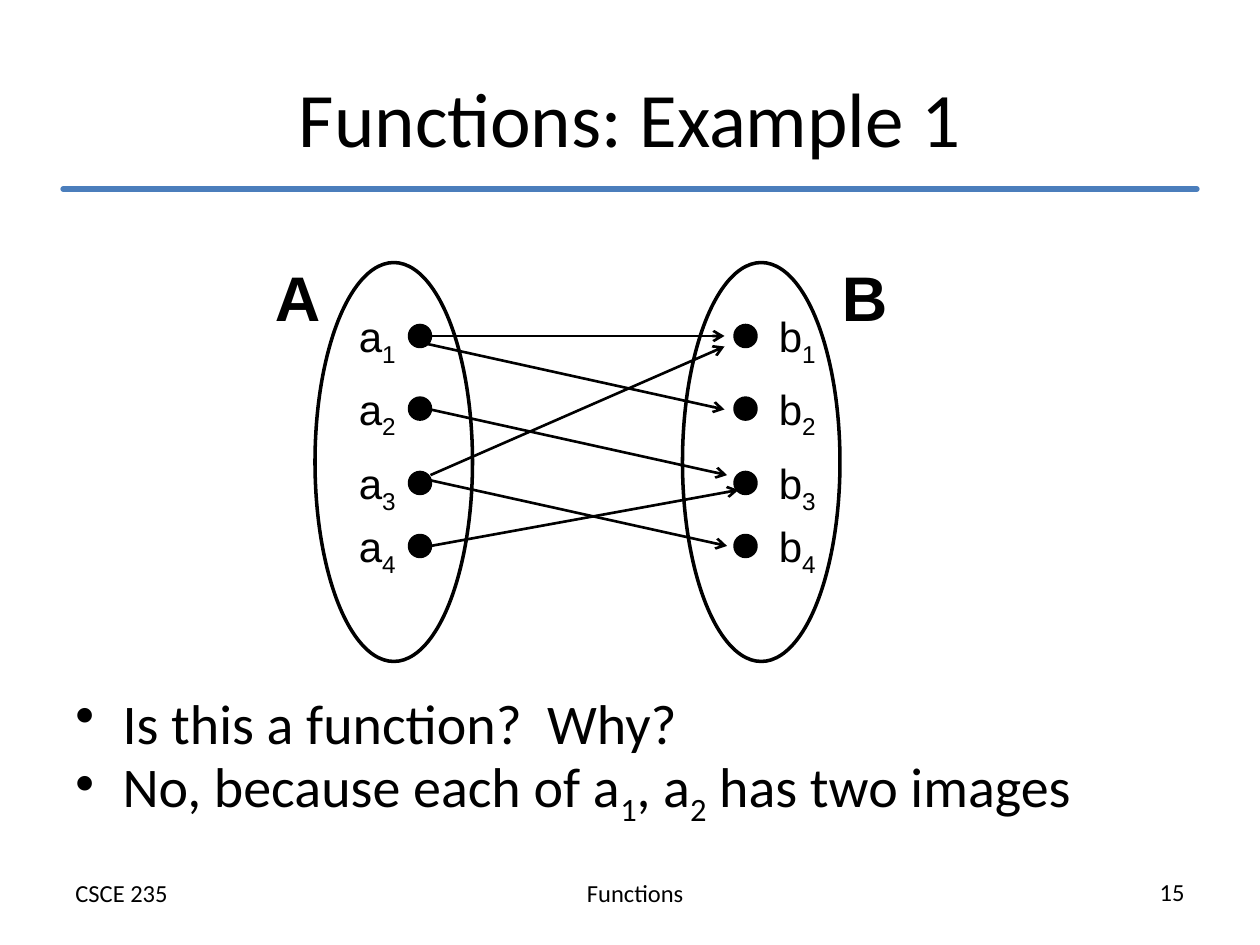
import pptx
import pptx.dml.color
import pptx.enum.shapes
import pptx.enum.text
import pptx.oxml.ns
import pptx.util
from lxml import etree

Pt = pptx.util.Pt
ALIGN = pptx.enum.text.PP_ALIGN
OVAL = pptx.enum.shapes.MSO_SHAPE.OVAL
STRAIGHT = pptx.enum.shapes.MSO_CONNECTOR.STRAIGHT
qn = pptx.oxml.ns.qn
COLORS = {
    name: pptx.dml.color.RGBColor.from_string(value)
    for name, value in {"ink": "000000", "rule": "4B7EBC"}.items()
}

presentation = pptx.Presentation()
presentation.slide_width, presentation.slide_height = Pt(720), Pt(540)
slide = presentation.slides.add_slide(presentation.slide_layouts[5])


def add_text(box, text, font, size, align=ALIGN.LEFT, bold=False):
    shape = slide.shapes.add_textbox(*map(Pt, box))
    shape.text_frame.word_wrap = True
    paragraph = shape.text_frame.paragraphs[0]
    paragraph.alignment = align
    paragraph.font.name, paragraph.font.size = font, Pt(size)
    paragraph.font.bold = bold
    paragraph.font.color.rgb = COLORS["ink"]
    for index, part in enumerate(text.split("|")):
        run = paragraph.add_run()
        run.text = part
        if index % 2:
            run.font._element.set("baseline", "-25000")
    return paragraph


def add_line(start, end, color, width):
    connector = slide.shapes.add_connector(STRAIGHT, *map(Pt, start + end))
    connector.line.color.rgb = COLORS[color]
    connector.line.width = Pt(width)
    properties = connector._element.spPr
    etree.SubElement(properties, qn("a:effectLst"))
    return properties.find(qn("a:ln"))


add_text((258, 498, 210, 24.5), "Functions", "Calibri", 14, ALIGN.CENTER)
add_text((36, 498, 210, 24.5), "CSCE 235", "Calibri", 14)
add_text((474, 497.5, 210, 24.5), "15", "Calibri", 14, ALIGN.RIGHT)
add_line((36, 108), (684, 108), "rule", 3).set("cap", "rnd")

title = slide.shapes.title
title.left, title.top, title.width, title.height = map(Pt, (36, 21.6, 648, 90))
title.text_frame.text = "Functions: Example 1"
title.text_frame.vertical_anchor = pptx.enum.text.MSO_ANCHOR.MIDDLE
paragraph = title.text_frame.paragraphs[0]
paragraph.alignment = ALIGN.CENTER
paragraph.font.name, paragraph.font.size = "Calibri", Pt(44)
paragraph.font.color.rgb = COLORS["ink"]

dot_tops = [186, 227.5, 270, 306]
sets = [
    ("A", 150, 180, 234, 198),
    ("B", 474, 390, 420, 438),
]
for name, name_left, set_left, dot_left, label_left in sets:
    ovals = [(dot_left, top, 12, 12) for top in dot_tops]
    ovals.append((set_left, 150, 90, 228))
    for box in ovals:
        oval = slide.shapes.add_shape(OVAL, *map(Pt, box))
        oval.shadow.inherit = False
        oval.line.color.rgb = COLORS["ink"]
        oval.line.width = Pt(2)
        if box[2] == 12:
            oval.fill.solid()
            oval.fill.fore_color.rgb = COLORS["ink"]
        else:
            oval.fill.background()
    for number, top in enumerate(dot_tops, 1):
        label = f"{name.lower()}|{number}"
        add_text((label_left, top - 12, 42, 36.5), label, "Arial", 24)
    add_text((name_left, 144, 48, 51), name, "Arial", 36, bold=True)

arrows = [
    ((246, 192), (414, 192)),
    ((244, 196.5), (414, 234)),
    ((246, 234), (415.5, 271.5)),
    ((246, 274.5), (415.5, 312)),
    ((246, 312), (422, 280)),
    ((246, 271.5), (414, 198)),
]
for start, end in arrows:
    line = add_line(start, end, "ink", 1.5)
    etree.SubElement(line, qn("a:tailEnd"), type="arrow")

bullets = [
    (390, 68.5, "Is this a function?  Why?"),
    (426, 32.5, "No, because each of a|1|, a|2| has two images"),
]
for top, height, text in bullets:
    paragraph = add_text((36, top, 648, height), text, "Calibri", 32)
    paragraph.space_before = Pt(6.4)
    properties = paragraph._p.get_or_add_pPr()
    properties.set("marL", str(Pt(27)))
    properties.set("indent", str(Pt(-27)))
    bullet = etree.Element(qn("a:buChar"), char="•")
    properties.find(qn("a:spcBef")).addnext(bullet)

presentation.save("out.pptx")
